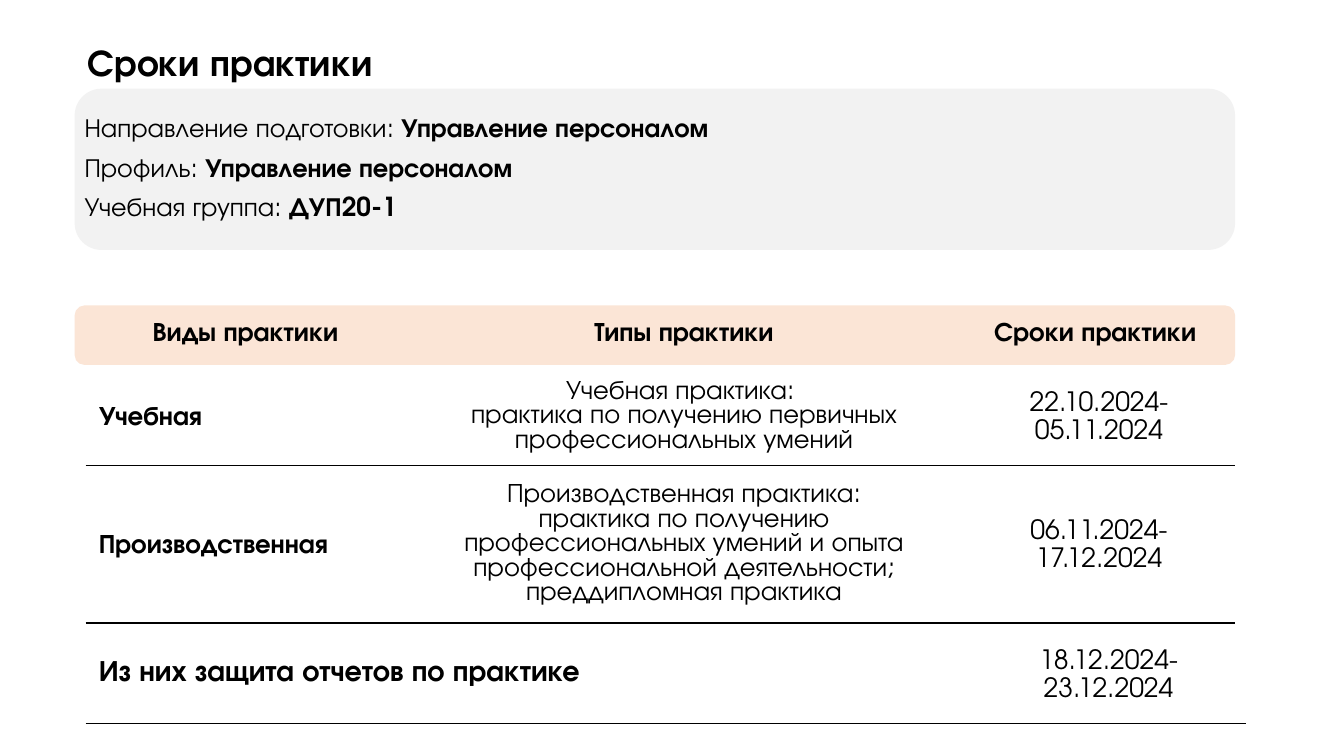
import pptx
import pptx.util
import pptx.dml.color
import pptx.enum.shapes
import pptx.enum.text
import lxml.etree

Inches, Pt = pptx.util.Inches, pptx.util.Pt
ALIGN = pptx.enum.text.PP_ALIGN

# Content
TITLE = "Сроки практики"
PROGRAMME = [
    ("Направление подготовки: ", "Управление персоналом"),
    ("Профиль: ", "Управление персоналом"),
    ("Учебная группа:", " ДУП20-1"),
]
HEADER = ["Виды практики", "Типы практики", "Сроки практики "]
PRACTICES = [
    ("Учебная",
     ["Учебная практика: ",
      "практика по получению первичных профессиональных умений"],
     "22.10.2024-05.11.2024"),
    ("Производственная",
     ["Производственная практика:",
      "практика по получению профессиональных умений и опыта "
      "профессиональной деятельности;",
      "преддипломная практика"],
     "06.11.2024-17.12.2024"),
]
DEFENCE = ("Из них защита отчетов по практике", "18.12.2024-23.12.2024")

THEME = {
    "font": "TeX Gyre Adventor",
    "ink": "000000", "panel": "F2F2F2", "band": "FBE5D6",
    "title": 26.7, "programme": 18.7, "cell": 19, "defence": 21,
    "tight": Pt(17.5), "loose": Pt(20), "open": Pt(28.2),
}

# Layout, in inches
SLIDE = (13.33, 7.5)
LEFT, WIDTH = 0.74, 11.51
TABLE_LEFT = 0.85
TABLE_TOP = 2.99
COLUMNS, ROWS = [3.17, 5.53, 2.7], [0.65, 0.98, 1.56]
DEFENCE_TOP = 6.21
DEFENCE_COLUMNS, DEFENCE_ROWS = [8.78, 2.73], [0.97]
WIDE_INSET = (0.13, 0.13, 0.13, 0.13)
FLAT_INSET = (0.1, 0, 0.1, 0)

TITLE_FORMAT = {"size": THEME["title"], "bold": True}
HEADER_FORMAT = {"bold": True, "align": ALIGN.CENTER}
KIND_FORMAT = {"bold": True, "spacing": THEME["loose"]}
TYPE_FORMAT = {"align": ALIGN.CENTER, "inset": FLAT_INSET}
DATES_FORMAT = {"align": ALIGN.CENTER, "spacing": THEME["loose"]}


def rgb(name):
    return pptx.dml.color.RGBColor.from_string(THEME[name])


def add_run(paragraph, text, size, bold=False):
    run = paragraph.add_run()
    run.text = text
    values = {"name": THEME["font"], "size": Pt(size), "bold": bold}
    for attribute, value in values.items():
        setattr(run.font, attribute, value)
    run.font.color.rgb = rgb("ink")


def set_insets(target, inset):
    """Set left, top, right and bottom margins of a cell or text frame."""
    for side, margin in zip(("left", "top", "right", "bottom"), inset):
        setattr(target, f"margin_{side}", Inches(margin))


def add_paragraphs(frame, lines, spacing, align=ALIGN.LEFT):
    """Write each line, given as a list of (text, size, bold) runs."""
    for index, runs in enumerate(lines):
        paragraph = frame.add_paragraph() if index else frame.paragraphs[0]
        paragraph.alignment = align
        paragraph.line_spacing = spacing
        for run in runs:
            add_run(paragraph, *run)


def add_text(slide, box, lines, spacing, inset):
    frame = slide.shapes.add_textbox(*map(Inches, box)).text_frame
    frame.word_wrap = True
    set_insets(frame, inset)
    add_paragraphs(frame, lines, spacing)


def add_panel(slide, top, height, colour):
    panel = slide.shapes.add_shape(
        pptx.enum.shapes.MSO_SHAPE.ROUNDED_RECTANGLE,
        *map(Inches, (LEFT, top, WIDTH, height)))
    panel.shadow.inherit = False
    panel.fill.solid()
    panel.fill.fore_color.rgb = rgb(colour)
    panel.line.fill.background()


def set_borders(cell, ruled):
    """Draw the ruled sides (of L, R, T, B) and clear the others."""
    properties = cell._tc.get_or_add_tcPr()
    namespace = pptx.oxml.ns.nsdecls("a")
    for side in "LRTB":
        paint = (f'<a:solidFill><a:srgbClr val="{THEME["ink"]}"/></a:solidFill>'
                 if side in ruled else "<a:noFill/>")
        properties.append(pptx.oxml.parse_xml(
            f'<a:ln{side} {namespace} w="{Pt(1)}">{paint}</a:ln{side}>'))


def fill_cell(cell, lines, ruled, size=THEME["cell"], bold=False,
              align=ALIGN.LEFT, spacing=THEME["tight"], inset=WIDE_INSET):
    set_borders(cell, ruled)
    cell.fill.background()
    cell.vertical_anchor = pptx.enum.text.MSO_ANCHOR.MIDDLE
    set_insets(cell, inset)
    add_paragraphs(cell.text_frame, [[(line, size, bold)] for line in lines],
                   spacing, align)


def add_schedule(slide, top, columns, rows, content):
    """Add a table; content holds per row its ruled sides and its cells."""
    table = slide.shapes.add_table(
        len(rows), len(columns),
        *map(Inches, (TABLE_LEFT, top, sum(columns), sum(rows)))).table
    table.first_row = table.horz_banding = False
    for column, width in zip(table.columns, columns):
        column.width = Inches(width)
    for row, height, (ruled, cells) in zip(table.rows, rows, content):
        row.height = Inches(height)
        for cell, (lines, style) in zip(row.cells, cells):
            fill_cell(cell, lines, ruled, **style)


def main():
    deck = pptx.Presentation()
    deck.slide_width, deck.slide_height = map(Inches, SLIDE)
    slide = deck.slides.add_slide(deck.slide_layouts[6])

    add_panel(slide, 3.03, 0.59, "band")
    add_panel(slide, 0.88, 1.6, "panel")
    add_text(slide, (LEFT, 0.15, 11.23, 0.89),
             [[(TITLE, *TITLE_FORMAT.values())]], 1.25, WIDE_INSET)
    size = THEME["programme"]
    add_text(slide, (LEFT, 0.98, SLIDE[0] - LEFT, 1.28),
             [[(label, size, False), (value, size, True)]
              for label, value in PROGRAMME],
             THEME["open"], (0.1, 0.05, 0.1, 0.05))

    schedule = [("", [([label], HEADER_FORMAT) for label in HEADER])]
    for index, (kind, types, dates) in enumerate(PRACTICES):
        schedule.append(("TB" if index else "B", [
            ([kind], KIND_FORMAT), (types, TYPE_FORMAT),
            ([dates], DATES_FORMAT)]))
    add_schedule(slide, TABLE_TOP, COLUMNS, ROWS, schedule)

    label, dates = DEFENCE
    add_schedule(slide, DEFENCE_TOP, DEFENCE_COLUMNS, DEFENCE_ROWS, [("B", [
        ([label], {"size": THEME["defence"], "bold": True}),
        ([dates], DATES_FORMAT | {"inset": FLAT_INSET})])])

    deck.save("out.pptx")


if __name__ == "__main__":
    main()
